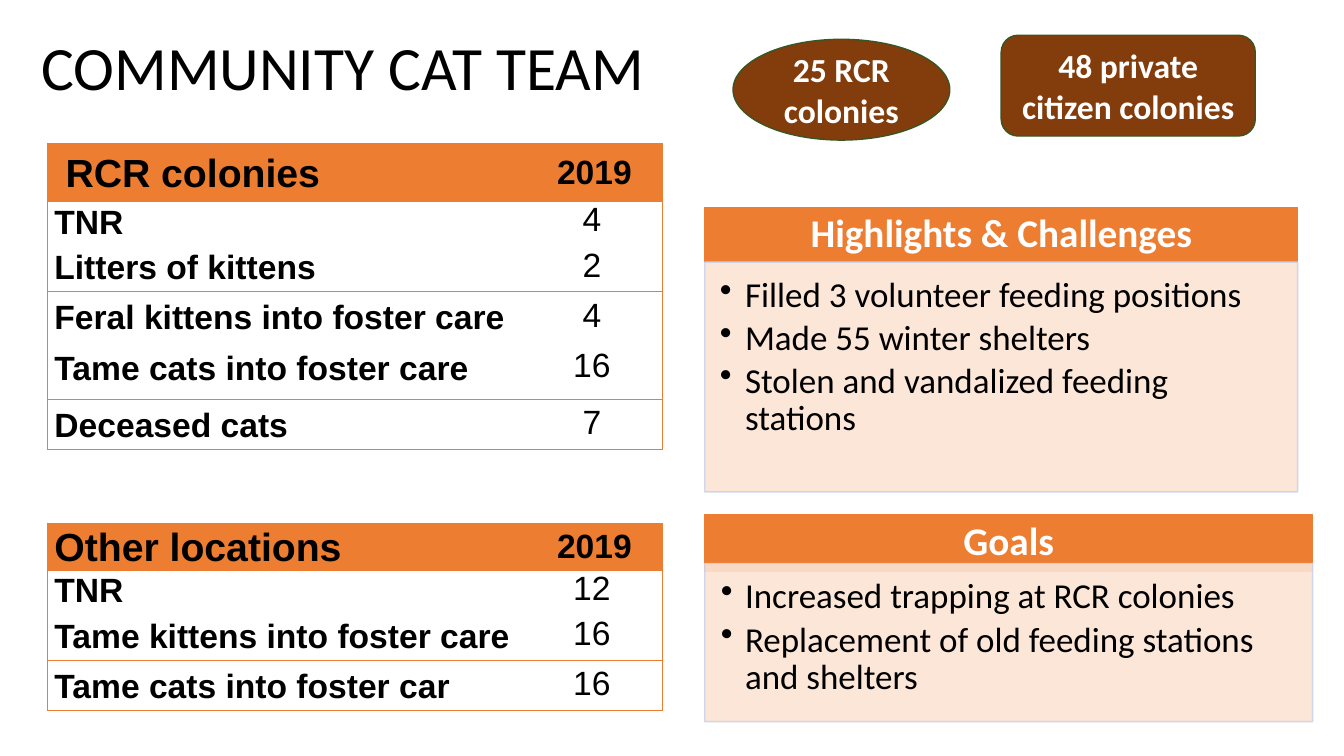
import lxml.etree
import pptx
import pptx.dml.color
import pptx.enum.shapes
import pptx.enum.text
import pptx.oxml
import pptx.oxml.ns
import pptx.util

PX = 9144
ORANGE, PEACH, BROWN = "ED7D31", "FBE4D4", "833C0B"
BLACK, WHITE = "000000", "FFFFFF"
NAMESPACE = pptx.oxml.ns.nsdecls("a")
SHAPES = pptx.enum.shapes.MSO_SHAPE
MIDDLE = pptx.enum.text.MSO_ANCHOR.MIDDLE
TOP = pptx.enum.text.MSO_ANCHOR.TOP
LEFT = pptx.enum.text.PP_ALIGN.LEFT
CENTER = pptx.enum.text.PP_ALIGN.CENTER


def color(value):
    return pptx.dml.color.RGBColor.from_string(value)


def write(frame, lines, font, ink, layout, bullet_indent=0):
    frame.word_wrap = True
    for index, line in enumerate(lines):
        paragraph = frame.paragraphs[0] if index == 0 else frame.add_paragraph()
        paragraph.text = line
        if bullet_indent:
            properties = paragraph._p.get_or_add_pPr()
            properties.set("marL", str(25 * PX))
            properties.set("indent", str(-bullet_indent * PX))
            properties.append(pptx.oxml.parse_xml(f'<a:buChar {NAMESPACE} char="•"/>'))
        for name, value in layout.items():
            if name != "space_before" or index > 0:
                setattr(paragraph, name, value)
        for name, value in font.items():
            setattr(paragraph.font, name, value)
        paragraph.font.color.rgb = color(ink)


presentation = pptx.Presentation()
presentation.slide_width = 1333 * PX
presentation.slide_height = 750 * PX
slide = presentation.slides.add_slide(presentation.slide_layouts[5])

title = slide.shapes.title
title_box = {"left": 31, "top": -3, "width": 1150, "height": 145}
for name, value in title_box.items():
    setattr(title, name, value * PX)
title.text_frame.vertical_anchor = MIDDLE
title_font = {"name": "Calibri", "size": pptx.util.Pt(44), "bold": False}
write(title.text_frame, ["COMMUNITY CAT TEAM"], title_font, BLACK,
      {"alignment": LEFT, "line_spacing": 0.9})

heading_font = {"name": "Calibri", "size": pptx.util.Pt(28), "bold": True}
bullet_font = {"name": "Calibri", "size": pptx.util.Pt(25), "bold": False}
badge_font = {"name": "Calibri", "size": pptx.util.Pt(24), "bold": True}
heading_layout = {"alignment": CENTER, "line_spacing": 0.9}
badge_layout = {"alignment": CENTER}

highlights = ["Filled 3 volunteer feeding positions", "Made 55 winter shelters",
              "Stolen and vandalized feeding stations"]
goals = ["Increased trapping at RCR colonies",
         "Replacement of old feeding stations and shelters"]
heading_look = (SHAPES.RECTANGLE, ORANGE, ORANGE, MIDDLE, (20, 12, 20, 12),
                heading_font, WHITE)
body_look = (SHAPES.RECTANGLE, PEACH, "CCD3EA", TOP, (15, 15, 20, 23),
             bullet_font, BLACK)
badge_look = (BROWN, "385623", MIDDLE, (10, 5, 10, 5), badge_font, WHITE)
boxes = [
    ((699, 206, 588, 54), heading_look, ["Highlights & Challenges"], heading_layout, 0),
    ((699, 260, 588, 228), body_look, highlights,
     {"alignment": LEFT, "line_spacing": 0.9, "space_before": pptx.util.Pt(3.6)}, 26),
    ((699, 511, 603, 56), heading_look, ["Goals"], heading_layout, 0),
    ((699, 559, 603, 157), body_look, goals,
     {"alignment": LEFT, "line_spacing": 0.9, "space_before": pptx.util.Pt(3.9)}, 24),
    ((727, 39, 215, 100), (SHAPES.OVAL, *badge_look), ["25 RCR colonies"],
     badge_layout, 0),
    ((993, 35, 252, 100), (SHAPES.ROUNDED_RECTANGLE, *badge_look),
     ["48 private citizen colonies"], badge_layout, 0),
]
for place, look, lines, layout, bullet_indent in boxes:
    preset, fill, outline, anchor, margins, font, ink = look
    shape = slide.shapes.add_shape(preset, *[value * PX for value in place])
    shape.shadow.inherit = False
    shape.fill.solid()
    shape.fill.fore_color.rgb = color(fill)
    shape.line.color.rgb = color(outline)
    shape.line.width = pptx.util.Pt(1)
    if fill == PEACH:
        for shade in shape._element.spPr.iter(pptx.oxml.ns.qn("a:srgbClr")):
            alpha = lxml.etree.SubElement(shade, pptx.oxml.ns.qn("a:alpha"))
            alpha.set("val", "90000")
    frame = shape.text_frame
    frame.vertical_anchor = anchor
    for side, margin in zip(("left", "top", "right", "bottom"), margins):
        setattr(frame, f"margin_{side}", margin * PX)
    write(frame, lines, font, ink, layout, bullet_indent)

tables = [
    (142, 18, [58, 39, 48, 44, 57, 48],
     [("RCR colonies", "2019"), ("TNR", "4"), ("Litters of kittens", "2"),
      ("Feral kittens into foster care", "4"), ("Tame cats into foster care", "16"),
      ("Deceased cats", "7")]),
    (519, 7, [10, 33, 33, 33],
     [("Other locations", "2019"), ("TNR", "12"),
      ("Tame kittens into foster care", "16"), ("Tame cats into foster car", "16")]),
]
for top, heading_margin, heights, rows in tables:
    graphic = slide.shapes.add_table(len(rows), 2, 47 * PX, top * PX,
                                     610 * PX, sum(heights) * PX)
    table = graphic.table
    table.first_row = table.horz_banding = False
    for column, width in zip(table.columns, (470, 140)):
        column.width = width * PX
    for row, (height, texts) in enumerate(zip(heights, rows)):
        table.rows[row].height = height * PX
        for column, text in enumerate(texts):
            cell = table.cell(row, column)
            heading, label = row == 0, column == 0
            padding = 0 if row < 2 else 5
            margins = {"left": heading_margin if heading and label else 7,
                       "top": padding, "right": 7, "bottom": padding}
            if heading and not label:
                margins["left"] = 12
            for side, margin in margins.items():
                setattr(cell, f"margin_{side}", margin * PX)
            cell.vertical_anchor = MIDDLE if heading else TOP
            if heading:
                cell.fill.solid()
                cell.fill.fore_color.rgb = color(ORANGE)
            else:
                cell.fill.background()
            font = {"name": "Arial", "bold": heading or label,
                    "size": pptx.util.Pt(28 if heading and label else 24)}
            layout = {"alignment": LEFT if label else CENTER,
                      "line_spacing": 1.07 if label else 1.0}
            write(cell.text_frame, [text], font, BLACK, layout)
            edges = {"lnL": label, "lnR": not label,
                     "lnT": heading or row % 2 == 1,
                     "lnB": row % 2 == 0 or row == len(rows) - 1}
            for position, (edge, drawn) in enumerate(edges.items()):
                paint = (f'<a:solidFill><a:srgbClr val="{ORANGE}"/></a:solidFill>'
                         if drawn else "<a:noFill/>")
                border = pptx.oxml.parse_xml(
                    f'<a:{edge} {NAMESPACE} w="9525">{paint}</a:{edge}>')
                cell._tc.get_or_add_tcPr().insert(position, border)

presentation.save("out.pptx")
